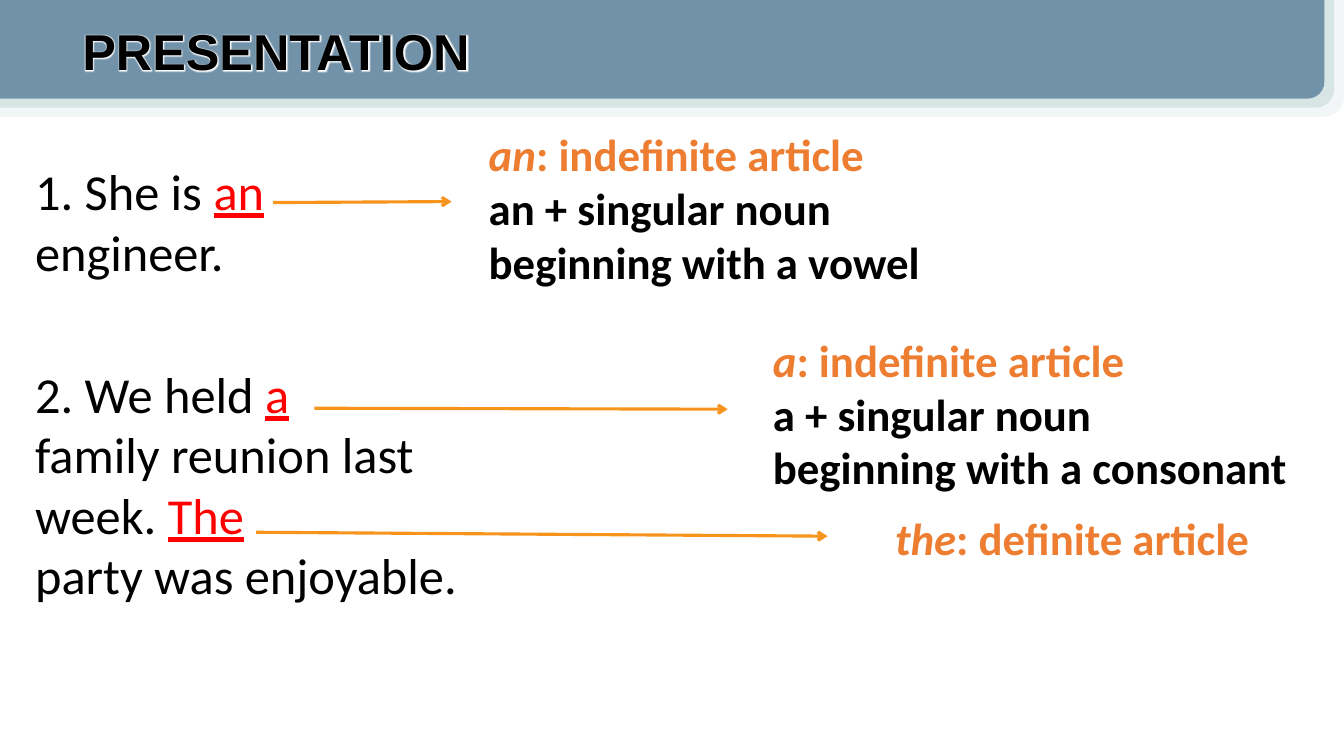
import dataclasses

import pptx
import pptx.dml.color
import pptx.enum.shapes
import pptx.enum.text
import pptx.oxml
import pptx.oxml.ns
import pptx.util

Pt = pptx.util.Pt
NS = pptx.oxml.ns.nsdecls("a")


def rgb(code):
    return pptx.dml.color.RGBColor.from_string(code)


@dataclasses.dataclass(frozen=True)
class Theme:
    ink: str = "000000"
    mark: str = "FF0000"
    note: str = "ED7D31"
    arrow: str = "F7941E"
    glow: str = "FFFFFF"
    bands: tuple = ("F3F6F6", "D8E5E5", "7192A9")
    body: str = "Calibri"
    head: str = "Arial"
    large: int = 36
    small: int = 32


class Page:
    def __init__(self, deck, theme):
        self.theme = theme
        self.slide = deck.slides.add_slide(deck.slide_layouts[6])
        t = theme
        self.styles = {
            "plain": dict(size=t.large, color=t.ink),
            "mark": dict(size=t.large, color=t.mark, underline=True),
            "term": dict(size=t.small, color=t.note, bold=True, italic=True),
            "note": dict(size=t.small, color=t.note, bold=True),
            "rule": dict(size=t.small, color=t.ink, bold=True),
            "title": dict(size=t.large, color=t.ink, bold=True, name=t.head),
        }

    def run(self, para, text, style):
        run = para.add_run()
        run.text = text
        look = {"name": self.theme.body, **self.styles[style]}
        font = run.font
        font.size = Pt(look.pop("size"))
        font.color.rgb = rgb(look.pop("color"))
        for key, value in look.items():
            setattr(font, key, value)
        return run

    def text(self, left, top, width, height, *paras):
        """Each paragraph is a list of (text, style); a newline breaks the line."""
        box = self.slide.shapes.add_textbox(Pt(left), Pt(top), Pt(width), Pt(height))
        frame = box.text_frame
        frame.word_wrap = True
        frame.auto_size = pptx.enum.text.MSO_AUTO_SIZE.SHAPE_TO_FIT_TEXT
        for i, parts in enumerate(paras):
            para = frame.add_paragraph() if i else frame.paragraphs[0]
            for text, style in parts:
                for j, line in enumerate(text.split("\n")):
                    if j:
                        para.add_line_break()
                    if line:
                        self.run(para, line, style)
        return box

    def title(self, text, *place):
        box = self.text(*place, [(text, "title")])
        glow = pptx.oxml.parse_xml(
            f'<a:effectLst {NS}><a:glow rad="{Pt(3)}">'
            f'<a:srgbClr val="{self.theme.glow}"/></a:glow></a:effectLst>')
        font = box.text_frame.paragraphs[0].runs[0].font
        fill = font._element.find(pptx.oxml.ns.qn("a:solidFill"))
        fill.addnext(glow)

    def arrow(self, x1, y1, x2, y2):
        line = self.slide.shapes.add_connector(
            pptx.enum.shapes.MSO_CONNECTOR.STRAIGHT, Pt(x1), Pt(y1), Pt(x2), Pt(y2))
        line.line.color.rgb = rgb(self.theme.arrow)
        line.line.width = Pt(2.25)
        line.line._get_or_add_ln().append(
            pptx.oxml.parse_xml(f'<a:tailEnd {NS} type="arrow"/>'))
        line._element.spPr.append(pptx.oxml.parse_xml(f"<a:effectLst {NS}/>"))

    def band(self, width, height, color):
        """Header band with its bottom right corner rounded."""
        band = self.slide.shapes.add_shape(
            pptx.enum.shapes.MSO_SHAPE.ROUND_1_RECTANGLE,
            Pt(0), Pt(-1.5), Pt(width), Pt(height))
        band.shadow.inherit = False
        band.fill.solid()
        band.fill.fore_color.rgb = rgb(color)
        band.line.fill.background()
        band._element.spPr.xfrm.set("flipV", "1")


def main():
    deck = pptx.Presentation()
    deck.slide_width, deck.slide_height = Pt(960), Pt(540)
    theme = Theme()
    page = Page(deck, theme)

    for i, color in enumerate(theme.bands):
        page.band(960 - 7 * i, 85 - 6.5 * i, color)
    page.title("PRESENTATION", 51.8, 10.8, 365, 51)

    page.text(18, 110.9, 304.5, 94.5,
              [("1. She is ", "plain"), ("an", "mark"), (" engineer.", "plain")])
    page.text(18, 255.6, 329, 181.5,
              [("2. We held ", "plain"), ("a", "mark"),
               (" \nfamily reunion last week. ", "plain"), ("The", "mark"),
               (" \nparty was enjoyable.", "plain")])

    page.text(342, 87.1, 356.4, 124,
              [("an", "term"), (": indefinite article", "note")],
              [("an + singular noun beginning with a vowel", "rule")])
    page.text(545, 234, 401, 124,
              [("a", "term"), (": indefinite article", "note")],
              [("a + singular noun \nbeginning with a consonant", "rule")])
    page.text(632.2, 361.4, 303, 46,
              [("the", "term"), (": definite article", "note")])

    page.arrow(195.1, 144.7, 322.6, 144)
    page.arrow(224.6, 291.6, 519.8, 292.3)
    page.arrow(182.9, 380.2, 591.1, 383)
    deck.save("out.pptx")


if __name__ == "__main__":
    main()
